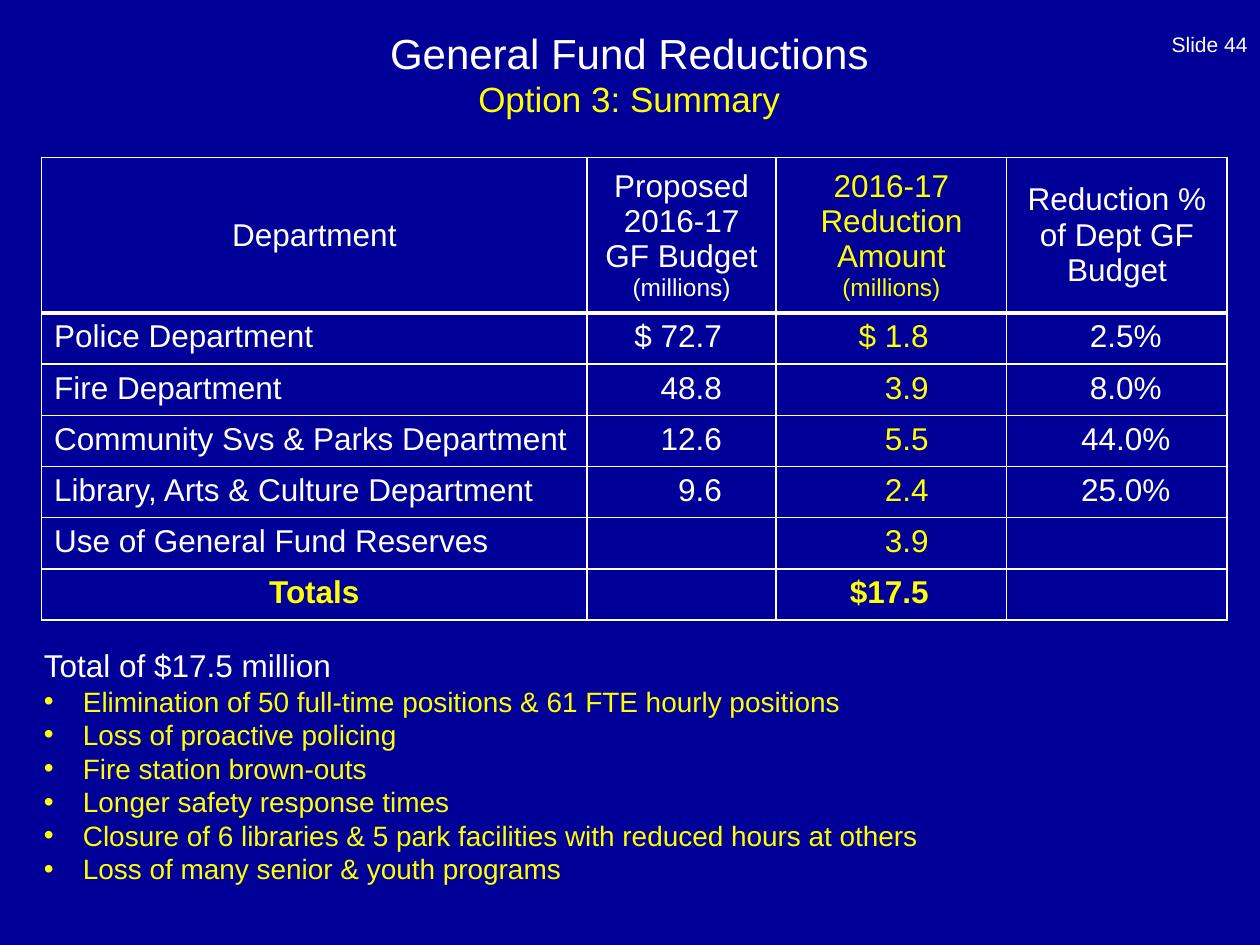
from lxml import etree
from pptx import Presentation, util as u
from pptx.dml.color import RGBColor
from pptx.enum import text
from pptx.oxml.ns import qn

COLORS = {"navy": "000099", "white": "FFFFFF", "yellow": "FFFF00"}
LEFT, CENTER, RIGHT = text.PP_ALIGN.LEFT, text.PP_ALIGN.CENTER, text.PP_ALIGN.RIGHT
TOP, MIDDLE, BOTTOM = text.MSO_ANCHOR.TOP, text.MSO_ANCHOR.MIDDLE, text.MSO_ANCHOR.BOTTOM

HEADERS = [
    (["Department"], "white"),
    (["Proposed", "2016-17 GF Budget", "(millions)"], "white"),
    (["2016-17 Reduction Amount", "(millions)"], "yellow"),
    (["Reduction % of Dept GF Budget"], "white"),
]
ROWS = [
    ("Police Department", "$ 72.7", "$ 1.8", "2.5%"),
    ("Fire Department", "48.8", "3.9", "8.0%"),
    ("Community Svs & Parks Department", "12.6", "5.5", "44.0%"),
    ("Library, Arts & Culture Department", "9.6", "2.4", "25.0%"),
    ("Use of General Fund Reserves", "", "3.9", ""),
    ("Totals", "", "$17.5", ""),
]
# Body columns: width, alignment, left margin, right margin, colour
COLUMNS = [
    (4.33, LEFT, 0.1, 0.1, "white"),
    (1.5, RIGHT, 0.1, 0.43, "white"),
    (1.83, RIGHT, 0.1, 0.62, "yellow"),
    (1.75, CENTER, 0.24, 0.1, "white"),
]
EFFECTS = [
    "Elimination of 50 full-time positions & 61 FTE hourly positions",
    "Loss of proactive policing",
    "Fire station brown-outs",
    "Longer safety response times",
    "Closure of 6 libraries & 5 park facilities with reduced hours at others",
    "Loss of many senior & youth programs",
]


def add_text(tf, words, size=18, color="white", align=LEFT, bold=False, bullet=False):
    """Write one paragraph, using the empty first one when there is one."""
    p = tf.paragraphs[0] if not tf.text else tf.add_paragraph()
    p.alignment = align
    if bullet:
        pPr = p._p.get_or_add_pPr()
        indent = u.Inches(0.31)
        pPr.set("marL", str(indent))
        pPr.set("indent", str(-indent))
        etree.SubElement(pPr, qn("a:buFont"), typeface="Arial")
        etree.SubElement(pPr, qn("a:buChar"), char="•")
    r = p.add_run()
    r.text = words
    r.font.name, r.font.size, r.font.bold = "Arial", u.Pt(size), bold
    r.font.color.rgb = RGBColor.from_string(COLORS[color])


def add_box(s, box, anchor):
    tf = s.shapes.add_textbox(*map(u.Inches, box)).text_frame
    tf.word_wrap = True
    tf.vertical_anchor = anchor
    return tf


def set_borders(cell, **widths):
    tcPr = cell._tc.get_or_add_tcPr()
    for i, side in enumerate(("lnL", "lnR", "lnT", "lnB")):
        ln = etree.Element(qn("a:" + side), w=str(u.Pt(widths.get(side, 1))))
        fill = etree.SubElement(ln, qn("a:solidFill"))
        etree.SubElement(fill, qn("a:srgbClr"), val=COLORS["white"])
        tcPr.insert(i, ln)


def add_title(s, box):
    tf = add_box(s, box, MIDDLE)
    add_text(tf, "General Fund Reductions", size=24, align=CENTER)
    add_text(tf, "Option 3: Summary", size=20, color="yellow", align=CENTER)


def add_slide_label(s, box):
    add_text(add_box(s, box, BOTTOM), "Slide 44", size=12, align=RIGHT)


def add_budget_table(s, box):
    header_height = 1.16
    table = s.shapes.add_table(len(ROWS) + 1, len(COLUMNS), *map(u.Inches, box)).table
    table.first_row = table.horz_banding = False
    body_height = (box[3] - header_height) / len(ROWS)
    for i, row in enumerate(table.rows):
        row.height = u.Inches(body_height if i else header_height)

    for c, (width, align, left, right, color) in enumerate(COLUMNS):
        table.columns[c].width = u.Inches(width)

        # Header cell
        cell = table.cell(0, c)
        cell.fill.background()
        cell.vertical_anchor = MIDDLE
        set_borders(cell, lnB=3)
        lines, header_color = HEADERS[c]
        for line in lines:
            add_text(cell.text_frame, line, size=14 if line == "(millions)" else 18,
                     color=header_color, align=CENTER)

        # Body cells, with the totals in bold yellow
        for i, values in enumerate(ROWS, 1):
            cell = table.cell(i, c)
            cell.fill.background()
            cell.vertical_anchor = TOP
            cell.margin_left, cell.margin_right = u.Inches(left), u.Inches(right)
            set_borders(cell, lnT=3 if i == 1 else 1)
            total = i == len(ROWS)
            if values[c]:
                add_text(cell.text_frame, values[c], color="yellow" if total else color,
                         align=CENTER if total and c == 0 else align, bold=total)


def add_effects(s, box):
    tf = add_box(s, box, TOP)
    add_text(tf, "Total of $17.5 million")
    for effect in EFFECTS:
        add_text(tf, effect, size=16, color="yellow", bullet=True)


def main():
    prs = Presentation()
    prs.slide_width, prs.slide_height = u.Inches(10), u.Inches(7.5)
    s = prs.slides.add_slide(prs.slide_layouts[6])
    s.background.fill.solid()
    s.background.fill.fore_color.rgb = RGBColor.from_string(COLORS["navy"])

    add_title(s, (0.33, 0.17, 9.33, 0.83))
    add_slide_label(s, (7.67, 0, 2.33, 0.5))
    add_budget_table(s, (0.33, 1.25, 9.42, 3.6))
    add_effects(s, (0.25, 5.08, 8.92, 2.02))
    prs.save("out.pptx")


if __name__ == "__main__":
    main()
